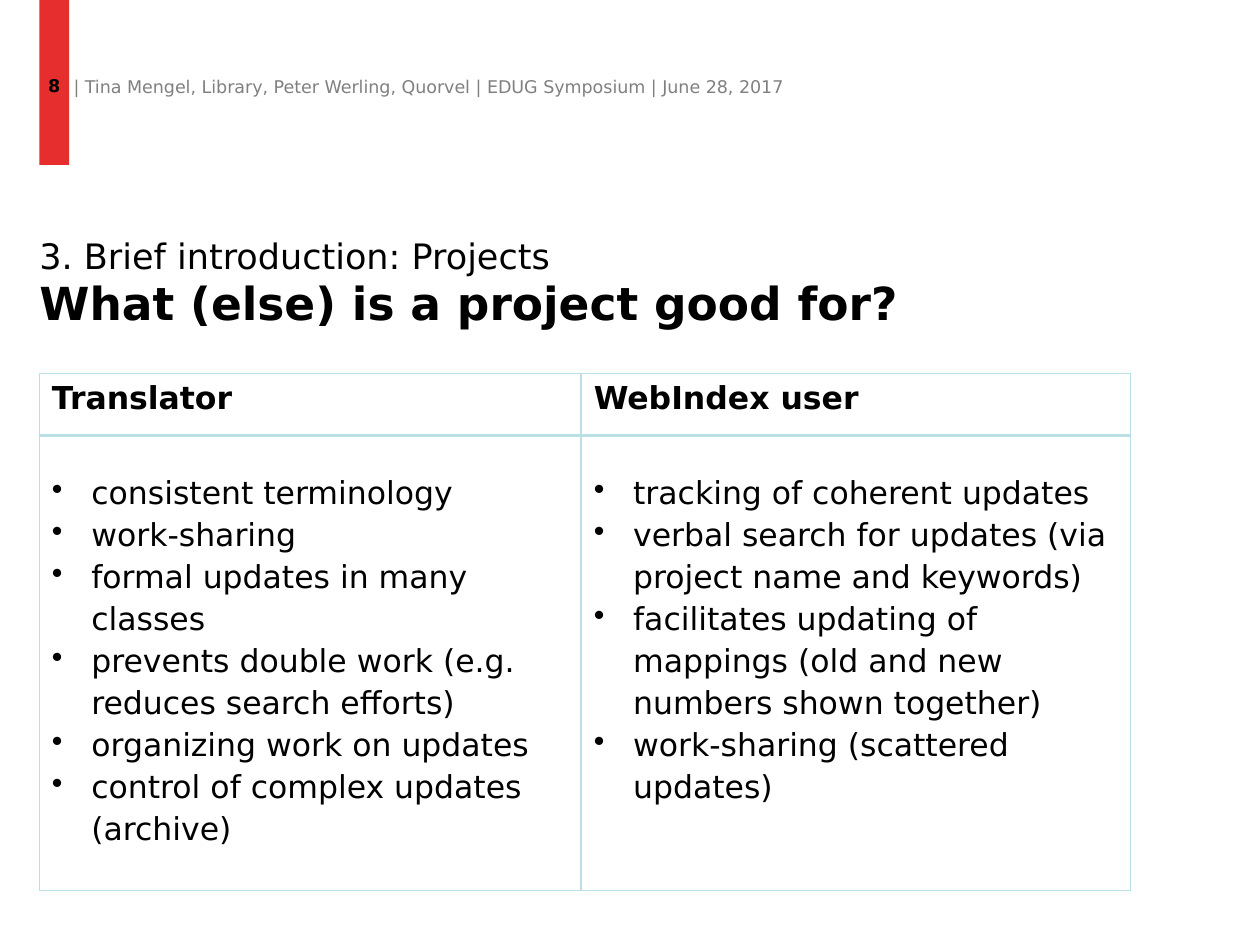
from dataclasses import dataclass

from lxml.etree import SubElement
from pptx import Presentation
from pptx.dml.color import RGBColor
from pptx.enum.shapes import MSO_SHAPE
from pptx.enum.text import MSO_ANCHOR, PP_ALIGN
from pptx.oxml.ns import qn
from pptx.util import Pt


@dataclass(frozen=True)
class Theme:
    font: str = "DejaVu Sans"
    text: str = "000000"
    muted: str = "808080"
    accent: str = "E62E2E"
    border: str = "BBE0E3"
    small: int = 10
    body: int = 18
    kicker: int = 20
    title: int = 26


THEME = Theme()
LEFT = 22.5
BULLET_INDENT = 22.5
CELL_MARGIN = 3.6
THIN, THICK = 1, 2

COLUMNS = [
    ("Translator", 309.6, [
        "consistent terminology",
        "work-sharing",
        "formal updates in many classes",
        "prevents double work (e.g. reduces search efforts)",
        "organizing work on updates",
        "control of complex updates (archive)",
    ]),
    ("WebIndex user", 313.9, [
        "tracking of coherent updates",
        "verbal search for updates (via project name and keywords)",
        "facilitates updating of mappings (old and new numbers shown together)",
        "work-sharing (scattered updates)",
    ]),
]
HEADER_HEIGHT, BODY_HEIGHT = 35.3, 260.2


def add_text(paragraph, text, *, size=THEME.body, color=THEME.text, bold=False):
    run = paragraph.add_run()
    run.text = text
    run.font.name = THEME.font
    run.font.size = Pt(size)
    run.font.bold = bold
    run.font.color.rgb = RGBColor.from_string(color)


def clear_margins(frame):
    frame.margin_left = frame.margin_top = frame.margin_right = frame.margin_bottom = 0


def add_text_box(slide, left, top, width, height):
    """Add an empty wrapping text box and return its first paragraph."""
    frame = slide.shapes.add_textbox(Pt(left), Pt(top), Pt(width), Pt(height)).text_frame
    clear_margins(frame)
    frame.word_wrap = True
    return frame.paragraphs[0]


def add_page_bar(slide, number):
    bar = slide.shapes.add_shape(MSO_SHAPE.RECTANGLE, Pt(LEFT), 0, Pt(17), Pt(94.3))
    bar.shadow.inherit = False
    bar.fill.solid()
    bar.fill.fore_color.rgb = RGBColor.from_string(THEME.accent)
    bar.line.fill.background()
    frame = bar.text_frame
    clear_margins(frame)
    frame.margin_top = Pt(3)
    frame.word_wrap = False
    frame.vertical_anchor = MSO_ANCHOR.MIDDLE
    paragraph = frame.paragraphs[0]
    paragraph.alignment = PP_ALIGN.CENTER
    add_text(paragraph, number, size=THEME.small, bold=True)


def add_title(slide, kicker, title):
    paragraph = add_text_box(slide, LEFT, 128.2, 666, 61.2)
    paragraph.line_spacing = Pt(30)
    add_text(paragraph, kicker, size=THEME.kicker)
    paragraph.add_line_break()
    add_text(paragraph, title, size=THEME.title, bold=True)


def style_cell(cell, top, bottom):
    """Give the cell its borders and no fill; top and bottom are line widths."""
    properties = cell._tc.get_or_add_tcPr()
    for edge, width in (("L", THIN), ("R", THIN), ("T", top), ("B", bottom)):
        line = SubElement(properties, qn(f"a:ln{edge}"), w=str(Pt(width)))
        fill = SubElement(line, qn("a:solidFill"))
        SubElement(fill, qn("a:srgbClr"), val=THEME.border)
    cell.fill.background()


def add_bullets(frame, items):
    for index, item in enumerate(items):
        paragraph = frame.add_paragraph() if index else frame.paragraphs[0]
        properties = paragraph._p.get_or_add_pPr()
        properties.set("marL", str(Pt(BULLET_INDENT)))
        properties.set("indent", str(-Pt(BULLET_INDENT)))
        SubElement(properties, qn("a:buChar"), char="•")
        paragraph.line_spacing = Pt(24)
        add_text(paragraph, item)


def add_comparison_table(slide):
    width = sum(column_width for _, column_width, _ in COLUMNS)
    table = slide.shapes.add_table(
        2, len(COLUMNS), Pt(LEFT), Pt(213.5), Pt(width), Pt(HEADER_HEIGHT + BODY_HEIGHT)
    ).table
    table.first_row = table.horz_banding = False
    table.rows[0].height = Pt(HEADER_HEIGHT)
    table.rows[1].height = Pt(BODY_HEIGHT)
    for index, (heading, column_width, items) in enumerate(COLUMNS):
        table.columns[index].width = Pt(column_width)
        header, body = table.cell(0, index), table.cell(1, index)
        style_cell(header, THIN, THICK)
        style_cell(body, THICK, THIN)
        add_text(header.text_frame.paragraphs[0], heading, bold=True)
        body.margin_top = Pt(CELL_MARGIN + 16)
        add_bullets(body.text_frame, items)


def main():
    presentation = Presentation()
    presentation.slide_width, presentation.slide_height = Pt(720), Pt(540)
    slide = presentation.slides.add_slide(presentation.slide_layouts[6])
    add_page_bar(slide, "8")
    add_text(
        add_text_box(slide, 42, 43.2, 553, 12.2),
        "| Tina Mengel, Library, Peter Werling, Quorvel | EDUG Symposium | June 28, 2017",
        size=THEME.small, color=THEME.muted,
    )
    add_title(slide, "3. Brief introduction: Projects", "What (else) is a project good for?")
    add_comparison_table(slide)
    presentation.save("out.pptx")


if __name__ == "__main__":
    main()
